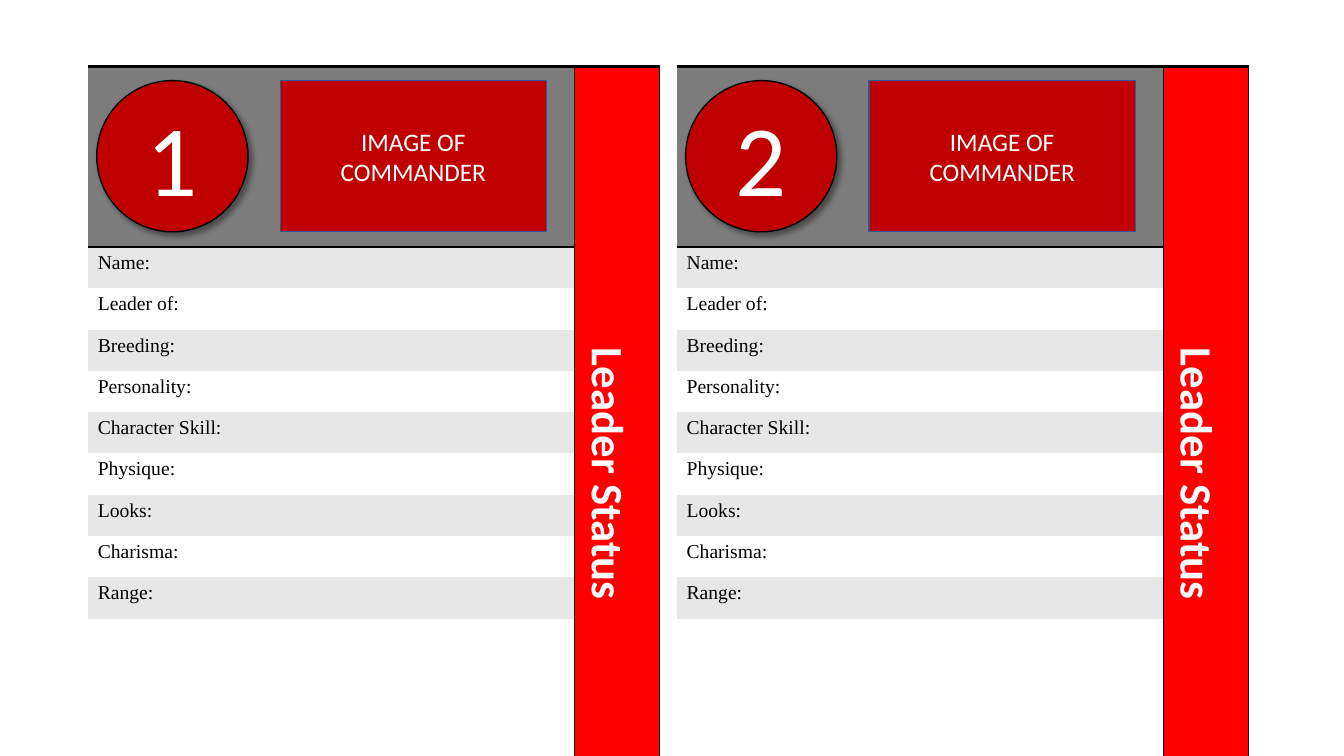
import lxml.etree
import pptx
import pptx.dml.color
import pptx.enum.shapes
import pptx.enum.text
import pptx.oxml.ns
import pptx.util

Inches = pptx.util.Inches
Pt = pptx.util.Pt
SHAPE = pptx.enum.shapes.MSO_SHAPE
MIDDLE = pptx.enum.text.MSO_ANCHOR.MIDDLE
CENTER = pptx.enum.text.PP_ALIGN.CENTER

FIELDS = ["Name:", "Leader of:", "Breeding:", "Personality:", "Character Skill:",
          "Physique:", "Looks:", "Charisma:", "Range:"]
COLUMNS = [1.57, 3.26, 0.84]
HEADER_HEIGHT = 1.79
ROW_HEIGHT = 0.41
NO_STYLE = "{2D5ABB26-0587-4C30-8999-92F81FD0307C}"


def color(value):
    """Return the colour for a hex string."""
    return pptx.dml.color.RGBColor.from_string(value)


def sub(parent, tag, **attributes):
    """Append an XML child with the given attributes."""
    return lxml.etree.SubElement(parent, pptx.oxml.ns.qn(tag), attributes)


def write(frame, text, size=14, font="Calibri", ink="FFFFFF", bold=False, align=None):
    """Write one formatted paragraph into a text frame."""
    para = frame.paragraphs[0]
    para.alignment = align
    span = para.add_run()
    span.text = text
    span.font.size = Pt(size)
    span.font.name = font
    span.font.bold = bold
    span.font.color.rgb = color(ink)


def format_cell(cell, fill, **borders):
    """Fill a cell and draw black borders, given as side=points."""
    properties = cell._tc.get_or_add_tcPr()
    for side in "LRTB":
        if side in borders:
            line = sub(properties, f"a:ln{side}", w=str(Pt(borders[side])))
            sub(sub(line, "a:solidFill"), "a:srgbClr", val="000000")
    cell.fill.solid()
    cell.fill.fore_color.rgb = color(fill)


def add_panel(page, kind, left, top, width, height, text, size, outline):
    """Add a dark red shape with centred white text."""
    box = page.shapes.add_shape(kind, Inches(left), Inches(top), Inches(width), Inches(height))
    box.shadow.inherit = False
    box.fill.solid()
    box.fill.fore_color.rgb = color("C00000")
    box.line.color.rgb = color(outline)
    box.line.width = Pt(1)
    box.text_frame.word_wrap = True
    box.text_frame.vertical_anchor = MIDDLE
    write(box.text_frame, text, size=size, align=CENTER)
    return box


def add_shadow(box):
    """Give a shape a soft shadow to the lower right."""
    effects = box._element.spPr.find(pptx.oxml.ns.qn("a:effectLst"))
    shadow = sub(effects, "a:outerShdw", blurRad=str(Pt(4)), dist=str(Pt(3)),
                 dir="2700000", algn="tl", rotWithShape="0")
    sub(sub(shadow, "a:srgbClr", val="000000"), "a:alpha", val="40000")


def add_sheet(page, left, top):
    """Add the table of leader fields with its vertical status band."""
    row_count = len(FIELDS) + 2
    height = HEADER_HEIGHT + ROW_HEIGHT * (row_count - 1)
    table = page.shapes.add_table(row_count, len(COLUMNS), Inches(left), Inches(top),
                                  Inches(sum(COLUMNS)), Inches(height)).table
    table._tbl.tblPr.find(pptx.oxml.ns.qn("a:tableStyleId")).text = NO_STYLE
    for column, width in zip(table.columns, COLUMNS):
        column.width = Inches(width)
    for index, row in enumerate(table.rows):
        row.height = Inches(ROW_HEIGHT if index else HEADER_HEIGHT)

    last = row_count - 1
    for index in (0, last):
        table.cell(index, 0).merge(table.cell(index, 1))
    status = table.cell(0, 2)
    status.merge(table.cell(last, 2))

    format_cell(table.cell(0, 0), "7C7C7C", R=1, T=2, B=2)
    format_cell(table.cell(0, 1), "7C7C7C", R=1, T=2, B=2)
    format_cell(table.cell(last, 0), "FFFFFF", R=1, B=2)
    format_cell(status, "FF0000", L=1, T=2, B=2)
    status._tc.get_or_add_tcPr().set("vert", "vert")
    status.vertical_anchor = MIDDLE
    write(status.text_frame, "Leader Status", size=32, bold=True, align=CENTER)

    for index, field in enumerate(FIELDS, start=1):
        fill = "E7E7E7" if index % 2 else "FFFFFF"
        format_cell(table.cell(index, 0), fill)
        format_cell(table.cell(index, 1), fill, R=1)
        write(table.cell(index, 0).text_frame, field, font="Times New Roman", ink="000000")


def add_leader_card(page, number, left, top):
    """Add one leader card: table, number badge and portrait panel."""
    add_sheet(page, left, top)
    badge = add_panel(page, SHAPE.OVAL, left + 0.09, top + 0.14, 1.5, 1.5,
                      str(number), 72, "000000")
    add_shadow(badge)
    add_panel(page, SHAPE.RECTANGLE, left + 1.91, top + 0.14, 2.64, 1.5,
              "IMAGE OF COMMANDER", 18, "325491")


def main():
    """Build the slide with its two leader cards."""
    deck = pptx.Presentation()
    deck.slide_width = Inches(13.33)
    deck.slide_height = Inches(7.5)
    page = deck.slides.add_slide(deck.slide_layouts[6])
    for number in (1, 2):
        add_leader_card(page, number, 0.87 + 5.84 * (number - 1), 0.66)
    deck.save("out.pptx")


if __name__ == "__main__":
    main()
